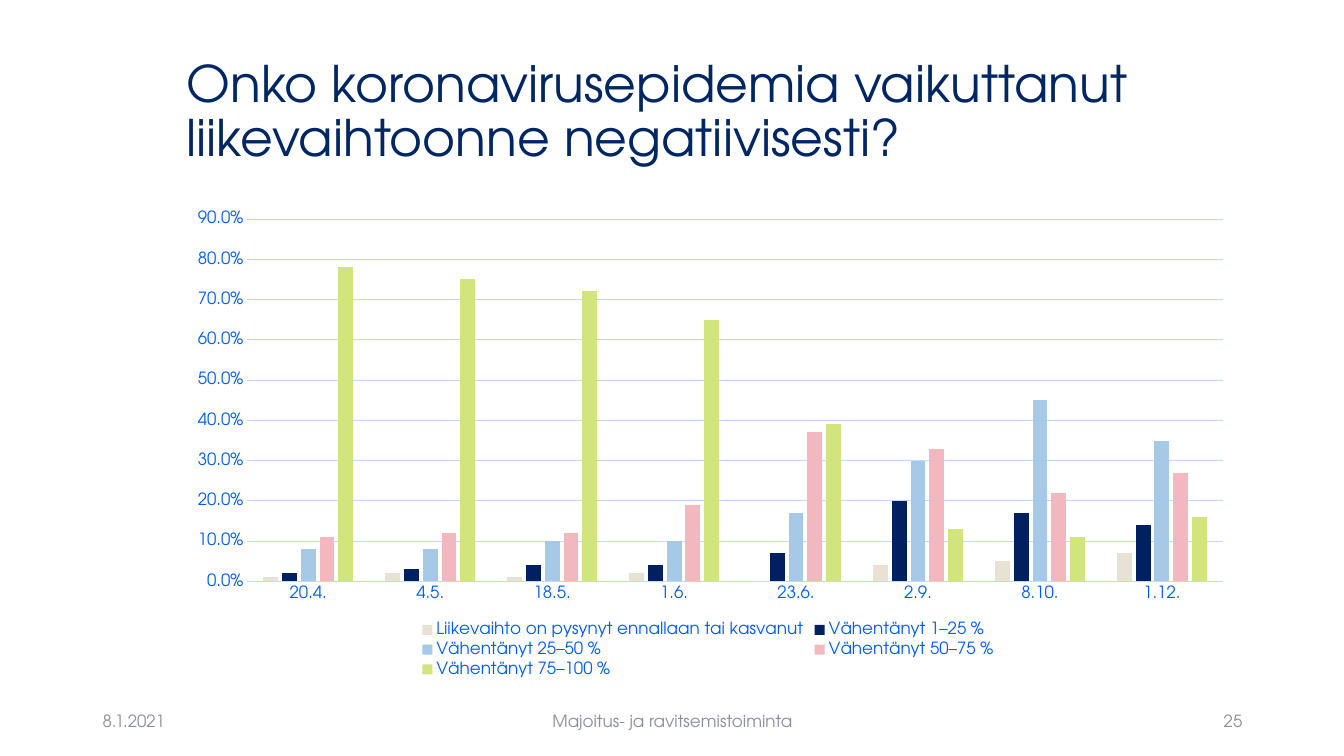
from pptx import Presentation
from pptx.chart.data import CategoryChartData
from pptx.dml.color import RGBColor
from pptx.enum.chart import XL_CHART_TYPE, XL_LEGEND_POSITION, XL_TICK_MARK
from pptx.enum.text import MSO_ANCHOR, PP_ALIGN
from pptx.util import Inches, Pt

FACE = "TeX Gyre Adventor"
HUES = {
    "title": "002663", "foot": "8C8E9F", "label": "005DF3", "grid": "C1D9FF",
    "same": "E8E2D5", "low": "002060", "mid": "A5C9E7", "high": "F2B7BF",
    "top": "D1E57C",
}
DATES = ["20.4.", "4.5.", "18.5.", "1.6.", "23.6.", "2.9.", "8.10.", "1.12."]
# Name, colour key and share of answers in percent for each date
ROWS = [
    ("Liikevaihto on pysynyt ennallaan tai kasvanut", "same",
     [1, 2, 1, 2, 0, 4, 5, 7]),
    ("Vähentänyt 1–25 % ", "low", [2, 3, 4, 4, 7, 20, 17, 14]),
    ("Vähentänyt 25–50 % ", "mid", [8, 8, 10, 10, 17, 30, 45, 35]),
    ("Vähentänyt 50–75 % ", "high", [11, 12, 12, 19, 37, 33, 22, 27]),
    ("Vähentänyt 75–100 % ", "top", [78, 75, 72, 65, 39, 13, 11, 16]),
]


def hue(key):
    return RGBColor.from_string(HUES[key])


def style(font, size, key):
    for name, value in {"name": FACE, "size": Pt(size), "bold": False}.items():
        setattr(font, name, value)
    font.color.rgb = hue(key)


def rule(line):
    line.width = Pt(0.75)
    line.color.rgb = hue("grid")


def add_title(slide, box, text):
    title = slide.shapes.title
    for name, value in zip(("left", "top", "width", "height"), box):
        setattr(title, name, Inches(value))
    frame = title.text_frame
    frame.text = text
    frame.vertical_anchor = MSO_ANCHOR.MIDDLE
    para = frame.paragraphs[0]
    para.alignment = PP_ALIGN.LEFT
    para.line_spacing = 0.9
    style(para.runs[0].font, 36, "title")


def add_chart(slide, box):
    data = CategoryChartData(number_format="0.0%")
    data.categories = DATES
    for name, _, shares in ROWS:
        data.add_series(name, [share / 100 for share in shares])
    chart = slide.shapes.add_chart(
        XL_CHART_TYPE.COLUMN_CLUSTERED, *map(Inches, box), data).chart
    chart.has_title = False
    style(chart.font, 10, "title")

    # Columns
    plot = chart.plots[0]
    form = {"gap_width": 219, "overlap": -27, "vary_by_categories": False}
    for name, value in form.items():
        setattr(plot, name, value)
    for series, (_, key, _) in zip(plot.series, ROWS):
        series.invert_if_negative = False
        series.format.fill.solid()
        series.format.fill.fore_color.rgb = hue(key)

    # Axes
    dates, scale = chart.category_axis, chart.value_axis
    for axis in (dates, scale):
        axis.major_tick_mark = axis.minor_tick_mark = XL_TICK_MARK.NONE
        style(axis.tick_labels.font, 12, "label")
    rule(dates.format.line)
    scale.format.line.fill.background()
    rule(scale.major_gridlines.format.line)
    form = {"minimum_scale": 0, "maximum_scale": 0.9, "major_unit": 0.1}
    for name, value in form.items():
        setattr(scale, name, value)
    scale.tick_labels.number_format = "0.0%"
    scale.tick_labels.number_format_is_linked = False

    # Legend
    chart.has_legend = True
    chart.legend.position = XL_LEGEND_POSITION.BOTTOM
    chart.legend.include_in_layout = False
    style(chart.legend.font, 12, "label")


def add_foot(slide, box):
    left, top, width, height = box
    side, mid = 3, 4.5
    parts = [
        ("8.1.2021", left, side, PP_ALIGN.LEFT),
        ("Majoitus- ja ravitsemistoiminta", left + (width - mid) / 2, mid,
         PP_ALIGN.CENTER),
        ("25", left + width - side, side, PP_ALIGN.RIGHT),
    ]
    for text, start, wide, align in parts:
        frame = slide.shapes.add_textbox(
            *map(Inches, (start, top, wide, height))).text_frame
        frame.word_wrap = True
        frame.vertical_anchor = MSO_ANCHOR.MIDDLE
        frame.text = text
        para = frame.paragraphs[0]
        para.alignment = align
        style(para.runs[0].font, 12, "foot")


def main():
    deck = Presentation()
    deck.slide_width, deck.slide_height = Inches(13.33), Inches(7.5)
    slide = deck.slides.add_slide(deck.slide_layouts[5])
    left, width = 1.75, 10.59
    add_title(slide, (left, 0.4, width, 1.45),
              "Onko koronavirusepidemia vaikuttanut "
              "liikevaihtoonne negatiivisesti?")
    add_foot(slide, (0.92, 6.95, 11.5, 0.4))
    add_chart(slide, (left, 2, width, 4.76))
    deck.save("out.pptx")


if __name__ == "__main__":
    main()
